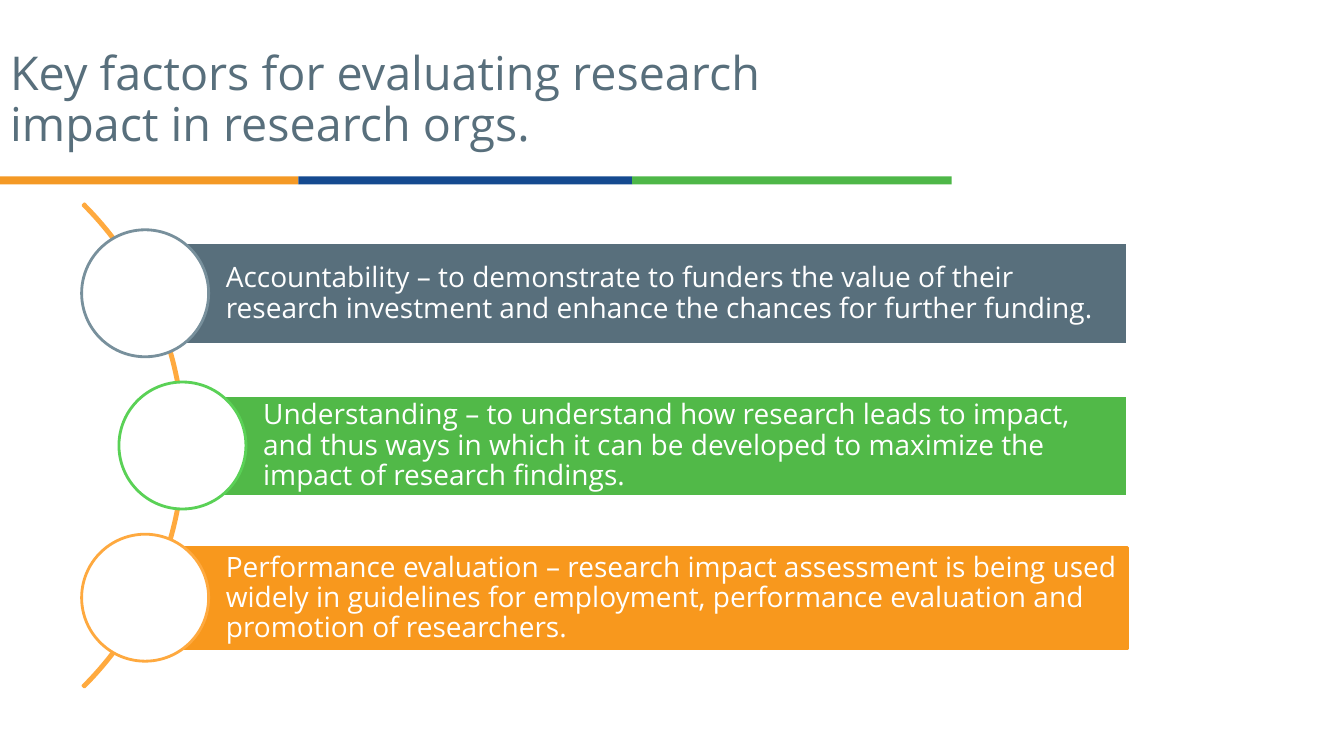
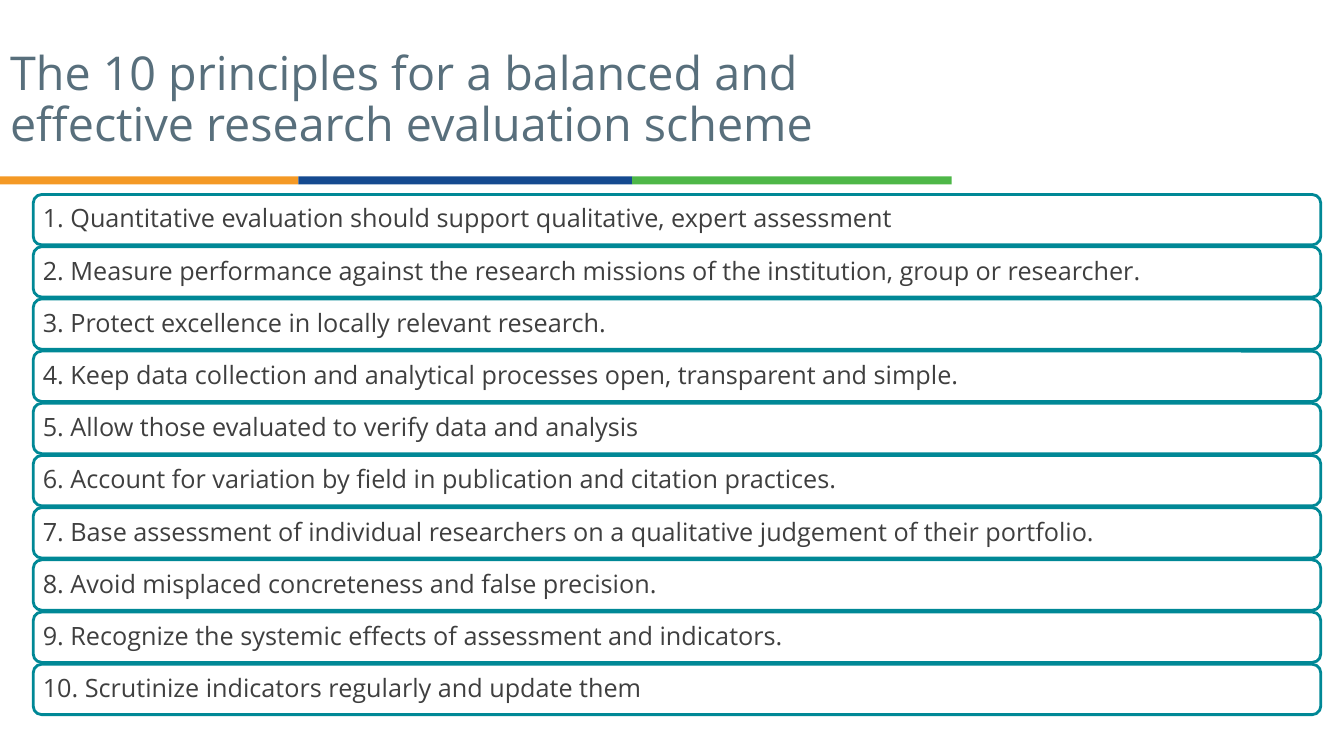
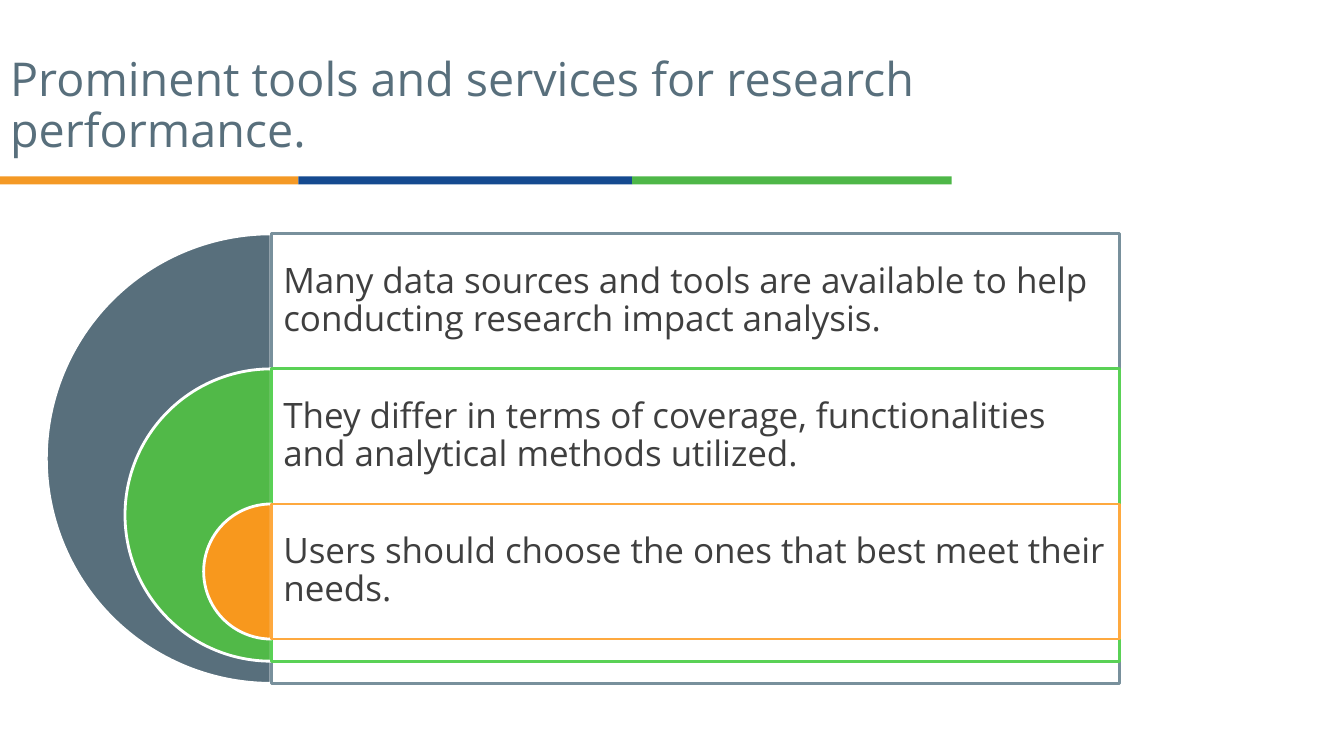
from dataclasses import dataclass

from lxml.etree import SubElement
from pptx import Presentation
from pptx.dml.color import RGBColor
from pptx.enum.shapes import MSO_SHAPE as SHAPE, PP_PLACEHOLDER as PH
from pptx.enum.text import MSO_ANCHOR as ANCHOR, MSO_AUTO_SIZE as AUTO_SIZE, PP_ALIGN as ALIGN
from pptx.oxml.ns import qn
from pptx.presentation import Presentation as Deck
from pptx.shapes.autoshape import Shape
from pptx.slide import Slide, SlideLayout
from pptx.text.text import TextFrame
from pptx.util import Inches, Pt

FONT = "Open Sans"
WHITE = RGBColor(0xFF, 0xFF, 0xFF)
INK = RGBColor(0x3F, 0x3F, 0x3F)
SLATE = RGBColor(0x58, 0x6F, 0x7C)
SLATE_EDGE = RGBColor(0x78, 0x90, 0x9C)
GREEN = RGBColor(0x51, 0xB9, 0x48)
GREEN_EDGE = RGBColor(0x5A, 0xD1, 0x56)
ORANGE = RGBColor(0xF8, 0x98, 0x1D)
ORANGE_EDGE = RGBColor(0xFE, 0xA9, 0x3F)
ARC_ORANGE = RGBColor(0xFF, 0xAA, 0x3F)
TEAL = RGBColor(0x00, 0x88, 0x96)
BAND_ORANGE = RGBColor(0xF4, 0x99, 0x25)
BAND_BLUE = RGBColor(0x15, 0x4A, 0x90)
BAND_GREEN = RGBColor(0x4E, 0xB7, 0x48)


@dataclass(frozen=True)
class Box:
    """Position and size in inches."""

    x: float
    y: float
    w: float
    h: float


@dataclass(frozen=True)
class Band:
    """One coloured stretch of the rule under the title."""

    x: float
    w: float
    color: RGBColor


@dataclass(frozen=True)
class Factor:
    """A bar with a circle at its left end."""

    x: float
    fill: RGBColor
    bar_edge: RGBColor
    circle_edge: RGBColor
    text: str


@dataclass(frozen=True)
class Layer:
    """A half disc with the panel beside it."""

    fill: RGBColor
    edge: RGBColor
    text: str


BANDS = [
    Band(0, 2.96, BAND_ORANGE),
    Band(2.96, 3.31, BAND_BLUE),
    Band(6.27, 3.17, BAND_GREEN),
]

FACTORS = [
    Factor(1.44, SLATE, WHITE, SLATE_EDGE,
           "Accountability – to demonstrate to funders the value of their research "
           "investment and enhance the chances for further funding."),
    Factor(1.81, GREEN, WHITE, GREEN_EDGE,
           "Understanding – to understand how research leads to impact, and thus ways "
           "in which it can be developed to maximize the impact of research findings."),
    Factor(1.44, ORANGE, ORANGE, ORANGE_EDGE,
           "Performance evaluation – research impact assessment is being used widely in "
           "guidelines for employment, performance evaluation and promotion of researchers."),
]

PRINCIPLES = [
    "Quantitative evaluation should support qualitative, expert assessment",
    "Measure performance against the research missions of the institution, group or researcher.",
    "Protect excellence in locally relevant research.",
    "Keep data collection and analytical processes open, transparent and simple.",
    "Allow those evaluated to verify data and analysis",
    "Account for variation by field in publication and citation practices.",
    "Base assessment of individual researchers on a qualitative judgement of their portfolio.",
    "Avoid misplaced concreteness and false precision.",
    "Recognize the systemic effects of assessment and indicators.",
    "Scrutinize indicators regularly and update them",
]

LAYERS = [
    Layer(SLATE, SLATE_EDGE,
          "Many data sources and tools are available to help conducting research impact analysis."),
    Layer(GREEN, GREEN_EDGE,
          "They differ in terms of coverage, functionalities and analytical methods utilized."),
    Layer(ORANGE, ORANGE_EDGE,
          "Users should choose the ones that best meet their needs."),
]


def place(s: Shape, box: Box) -> None:
    """Move and size a shape."""
    s.left, s.top = Inches(box.x), Inches(box.y)
    s.width, s.height = Inches(box.w), Inches(box.h)


def add_shape(slide: Slide, kind: SHAPE, box: Box, fill: RGBColor | None = None,
              line: RGBColor | None = None, adj: tuple[float, ...] = ()) -> Shape:
    """Add a flat preset shape."""
    s = slide.shapes.add_shape(kind, Inches(box.x), Inches(box.y), Inches(box.w), Inches(box.h))
    s.shadow.inherit = False
    for i, value in enumerate(adj):
        s.adjustments[i] = value
    if fill is None:
        s.fill.background()
    else:
        s.fill.solid()
        s.fill.fore_color.rgb = fill
    if line is None:
        s.line.fill.background()
    else:
        s.line.color.rgb = line
        s.line.width = Pt(2)
    return s


def set_text(tf: TextFrame, text: str, size: float, color: RGBColor,
             insets: tuple[float, float, float, float]) -> None:
    """Write one left-aligned, vertically centred paragraph."""
    tf.text = text
    tf.word_wrap = True
    tf.auto_size = AUTO_SIZE.NONE
    tf.vertical_anchor = ANCHOR.MIDDLE
    tf.margin_left, tf.margin_top, tf.margin_right, tf.margin_bottom = map(Inches, insets)
    p = tf.paragraphs[0]
    p.alignment = ALIGN.LEFT
    p.line_spacing = 0.9
    p.font.name = FONT
    p.font.size = Pt(size)
    p.font.color.rgb = color


def set_opacity(s: Shape, percent: int) -> None:
    """Make a solid fill partly transparent."""
    color = s.element.spPr.find(qn("a:solidFill"))[0]
    SubElement(color, qn("a:alpha"), val=str(percent * 1000))


def add_slide(prs: Deck, layout: SlideLayout, title: str, box: Box) -> Slide:
    """Add a slide with its title."""
    slide = prs.slides.add_slide(layout)
    s = slide.shapes.title
    place(s, box)
    set_text(s.text_frame, title, 33.3, SLATE, (0.1, 0.05, 0.1, 0.05))
    return slide


def move_bands_to_layout(slide: Slide, layout: SlideLayout) -> None:
    """Put the coloured rule on the layout, in place of its footers."""
    for ph in list(layout.placeholders):
        if ph.placeholder_format.type != PH.TITLE:
            ph.element.getparent().remove(ph.element)
    for band in BANDS:
        s = add_shape(slide, SHAPE.RECTANGLE, Box(band.x, 1.75, band.w, 0.08), band.color)
        layout.shapes.element.append(s.element)


def draw_factors(slide: Slide) -> None:
    """Draw the arc with its bars and circles."""
    add_shape(slide, SHAPE.BLOCK_ARC, Box(-4.95, 1.03, 6.78, 6.78), None, ARC_ORANGE,
              (189, 27, 0.003))
    right, top, step = 11.18, 2.41, 1.51
    for i, factor in enumerate(FACTORS):
        y = top + i * step
        bar = add_shape(slide, SHAPE.RECTANGLE, Box(factor.x, y, right - factor.x, 1.01),
                        factor.fill, factor.bar_edge)
        set_text(bar.text_frame, factor.text, 20, WHITE, (0.8, 0.06, 0.06, 0.06))
        add_shape(slide, SHAPE.OVAL, Box(factor.x - 0.63, y - 0.13, 1.26, 1.26),
                  WHITE, factor.circle_edge)


def draw_principles(slide: Slide) -> None:
    """Draw the numbered rows."""
    top, last = 1.93, 6.59
    step = (last - top) / (len(PRINCIPLES) - 1)
    for i, text in enumerate(PRINCIPLES):
        row = add_shape(slide, SHAPE.ROUNDED_RECTANGLE, Box(0.33, top + i * step, 12.77, 0.5),
                        WHITE, TEAL, (0.17,))
        set_text(row.text_frame, f"{i + 1}. {text}", 18, INK, (0.07,) * 4)


def draw_layers(slide: Slide) -> None:
    """Draw the nested half discs and panels."""
    center, top, outer, row, shrink, inset = 2.69, 2.32, 4.46, 1.34, 1.56, 0.12
    for i, layer in enumerate(LAYERS):
        y, size = top + i * row, outer - i * shrink
        add_shape(slide, SHAPE.PIE, Box(center - size / 2, y, size, size),
                  layer.fill, WHITE, (54, 162))
        panel = add_shape(slide, SHAPE.RECTANGLE, Box(center, y, 8.41, size), WHITE, layer.edge)
        set_opacity(panel, 88)
        set_text(panel.text_frame, layer.text, 25, INK,
                 (inset, inset, inset, size - row + inset))


def main() -> None:
    """Build and save the deck."""
    prs = Presentation()
    prs.slide_width, prs.slide_height = Inches(13.33), Inches(7.5)
    layout = prs.slide_layouts[5]

    factors = add_slide(prs, layout, "Key factors for evaluating research impact in research orgs.",
                        Box(0, 0.41, 8.52, 1.18))
    move_bands_to_layout(factors, layout)
    draw_factors(factors)

    principles = add_slide(
        prs, layout, "The 10 principles for a balanced and effective research evaluation scheme",
        Box(0, 0.41, 8.97, 1.18))
    draw_principles(principles)

    tools = add_slide(prs, layout, "Prominent tools and services for research performance.",
                      Box(0, 0.47, 9.42, 1.18))
    draw_layers(tools)

    prs.save("out.pptx")


if __name__ == "__main__":
    main()
